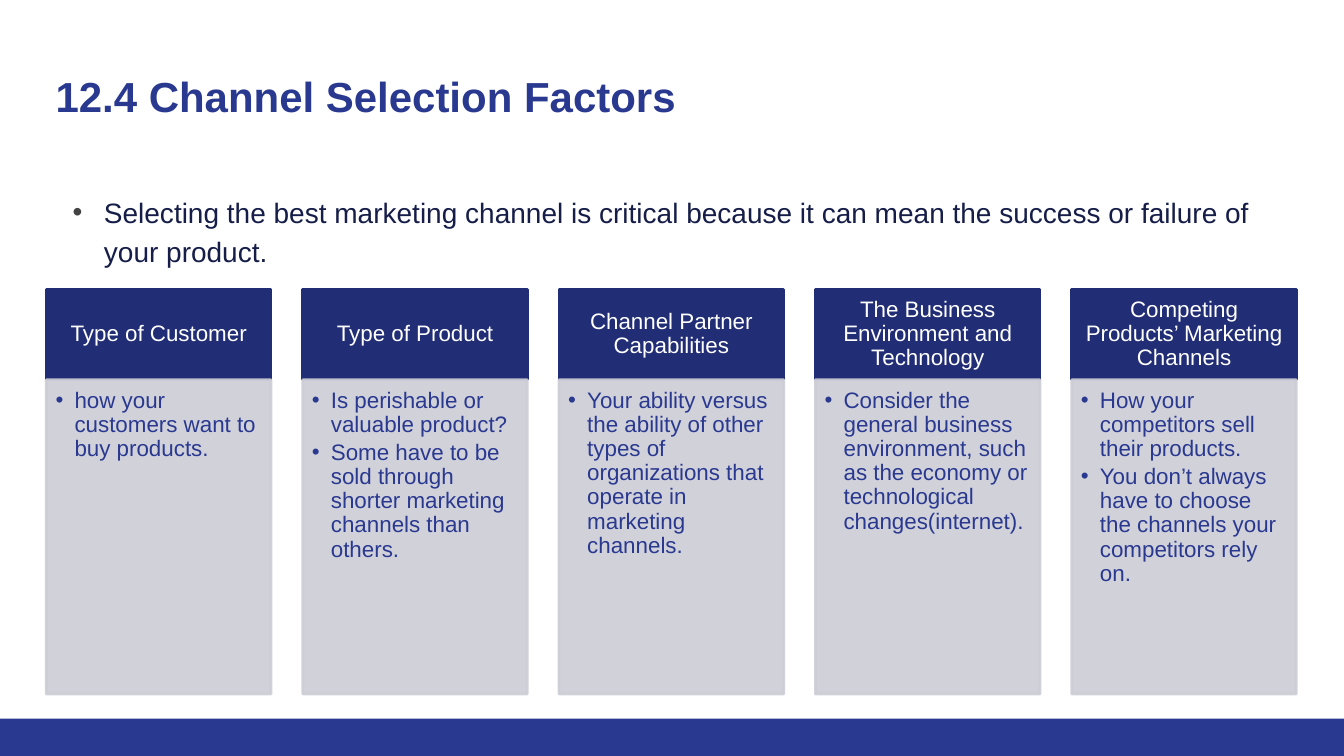
from dataclasses import dataclass

from lxml import etree
from pptx import Presentation
from pptx.dml.color import RGBColor
from pptx.enum.shapes import MSO_SHAPE
from pptx.enum.text import MSO_ANCHOR, PP_ALIGN
from pptx.oxml.ns import qn
from pptx.util import Cm, Pt

RECT = MSO_SHAPE.RECTANGLE
TOP, MIDDLE = MSO_ANCHOR.TOP, MSO_ANCHOR.MIDDLE
LEFT, CENTER = PP_ALIGN.LEFT, PP_ALIGN.CENTER

FONT = "Arial"
BLUE, NAVY, INK = "2A3990", "212D74", "151D48"
GREY, BULLET_GREY, WHITE = "CDCDD6", "434343", "FFFFFF"

SLIDE_W, SLIDE_H = 33.87, 19.05
CARD_X, CARD_W, CARD_PITCH = 1.17, 5.66, 6.46
HEAD_Y, HEAD_H = 7.29, 2.27
BODY_Y, BODY_H = 9.57, 7.92


@dataclass
class Factor:
    title: str
    points: list[str]


@dataclass
class Style:
    size: float
    color: str
    bold: bool = False
    align: PP_ALIGN = LEFT
    spacing: float = 1.0
    after: float = 0
    indent: float = 0
    hanging: float = 0
    bullet: str = ""


FACTORS = [
    Factor("Type of Customer", ["how your customers want to buy products."]),
    Factor("Type of Product", [
        "Is perishable or valuable product?",
        "Some have to be sold through shorter marketing channels than others.",
    ]),
    Factor("Channel Partner Capabilities", [
        "Your ability versus the ability of other types of organizations "
        "that operate in marketing channels.",
    ]),
    Factor("The Business Environment and Technology", [
        "Consider the general business environment, such as the economy or "
        "technological changes(internet).",
    ]),
    Factor("Competing Products’ Marketing Channels", [
        "How your competitors sell their products.",
        "You don’t always have to choose the channels your competitors rely on.",
    ]),
]

TITLE = Style(30, BLUE, bold=True)
INTRO = Style(20, INK, spacing=1.15, indent=1.22, hanging=0.79, bullet=BULLET_GREY)
HEAD = Style(16, WHITE, align=CENTER, spacing=0.9)
POINT = Style(16, BLUE, spacing=0.9, after=2.8, indent=0.48, hanging=0.48, bullet=BLUE)


def rgb(color: str) -> RGBColor:
    return RGBColor.from_string(color)


def add_bullet(p, style: Style) -> None:
    pPr = p._p.get_or_add_pPr()
    pPr.set("marL", str(Cm(style.indent)))
    pPr.set("indent", str(-Cm(style.hanging)))
    clr = etree.SubElement(pPr, qn("a:buClr"))
    etree.SubElement(clr, qn("a:srgbClr"), val=style.bullet)
    etree.SubElement(pPr, qn("a:buFont"), typeface=FONT)
    etree.SubElement(pPr, qn("a:buChar"), char="•")


def write(sp, texts: list[str], style: Style, insets: tuple, anchor: MSO_ANCHOR) -> None:
    tf = sp.text_frame
    tf.word_wrap = True
    tf.vertical_anchor = anchor
    tf.margin_left, tf.margin_top, tf.margin_right, tf.margin_bottom = map(Cm, insets)
    for i, text in enumerate(texts):
        p = tf.add_paragraph() if i else tf.paragraphs[0]
        if style.bullet:
            add_bullet(p, style)
        p.alignment = style.align
        p.line_spacing = style.spacing
        p.space_after = Pt(style.after)
        r = p.add_run()
        r.text = text
        r.font.name = FONT
        r.font.size = Pt(style.size)
        r.font.bold = style.bold
        r.font.color.rgb = rgb(style.color)


def add_rect(s, x: float, y: float, w: float, h: float, color: str,
             line: float = 0, opacity: int = 100):
    sp = s.shapes.add_shape(RECT, Cm(x), Cm(y), Cm(w), Cm(h))
    sp.shadow.inherit = False
    sp.fill.solid()
    sp.fill.fore_color.rgb = rgb(color)
    if line:
        sp.line.color.rgb = rgb(color)
        sp.line.width = Pt(line)
    else:
        sp.line.fill.background()
    if opacity < 100:
        for clr in sp._element.spPr.iter(qn("a:srgbClr")):
            etree.SubElement(clr, qn("a:alpha"), val=str(opacity * 1000))
    return sp


def add_text(s, y: float, h: float, text: str, style: Style) -> None:
    sp = s.shapes.add_textbox(Cm(1.15), Cm(y), Cm(31.55), Cm(h))
    write(sp, [text], style, (0.25, 0.25, 0.25, 0.25), TOP)


def add_factor(s, x: float, factor: Factor) -> None:
    head = add_rect(s, x, HEAD_Y, CARD_W, HEAD_H, NAVY, line=2)
    write(head, [factor.title], HEAD, (0.3, 0.18, 0.3, 0.18), MIDDLE)
    body = add_rect(s, x, BODY_Y, CARD_W, BODY_H, GREY, line=2, opacity=90)
    write(body, factor.points, POINT, (0.23, 0.23, 0.3, 0.36), TOP)


def main() -> None:
    prs = Presentation()
    prs.slide_width, prs.slide_height = Cm(SLIDE_W), Cm(SLIDE_H)
    s = prs.slides.add_slide(prs.slide_layouts[6])
    add_rect(s, 0, 18.11, SLIDE_W, 0.94, BLUE)
    add_text(s, 1.52, 2.26, "12.4 Channel Selection Factors", TITLE)
    add_text(s, 4.55, 3.02, "Selecting the best marketing channel is critical because "
             "it can mean the success or failure of your product.", INTRO)
    for i, factor in enumerate(FACTORS):
        add_factor(s, CARD_X + i * CARD_PITCH, factor)
    prs.save("out.pptx")


if __name__ == "__main__":
    main()
